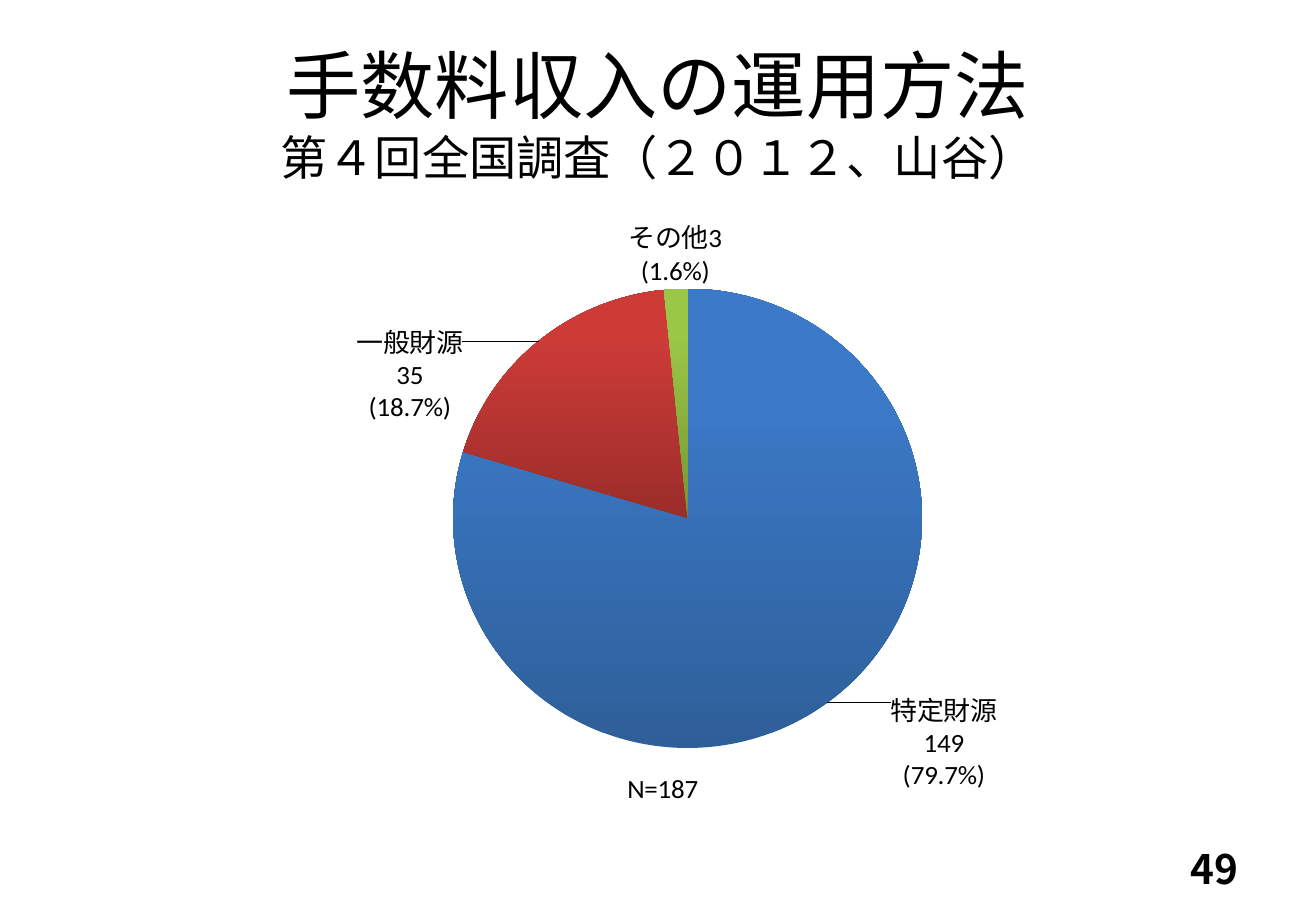
"""Build the slide on how fee income is used, with a pie chart of survey answers."""
from dataclasses import dataclass

from lxml.etree import SubElement
from pptx import Presentation
from pptx.chart.chart import Chart
from pptx.chart.data import CategoryChartData
from pptx.chart.series import PieSeries
from pptx.dml.color import RGBColor
from pptx.enum.chart import XL_CHART_TYPE, XL_LABEL_POSITION
from pptx.enum.text import MSO_ANCHOR, PP_ALIGN
from pptx.oxml import parse_xml
from pptx.oxml.ns import nsdecls, qn
from pptx.slide import Slide
from pptx.text.text import Font
from pptx.util import Pt

COLORS = {
    "text": "000000",
    "blue_dark": "2E5F99",
    "blue": "3C7AC9",
    "red_dark": "9B2D2A",
    "red": "CD3B37",
    "green_dark": "769535",
    "green": "9BC747",
}
LABEL_FORMAT = {"name": "Calibri", "size": Pt(16), "bold": False}


@dataclass(frozen=True)
class Line:
    text: str
    size: float


@dataclass(frozen=True)
class TextBlock:
    left: float
    top: float
    width: float
    height: float
    lines: tuple[Line, ...]
    align: PP_ALIGN
    font: str
    bold: bool = False


@dataclass(frozen=True)
class Slice:
    category: str
    value: int
    label: str
    color: str
    offset: tuple[float, float] | None = None


TEXTS = (
    TextBlock(39, 21.6, 702, 90,
              (Line("手数料収入の運用方法", 44),
               Line("第４回全国調査（２０１２、山谷）", 28)),
              PP_ALIGN.CENTER, "Calibri"),
    TextBlock(558.7, 500.4, 182.2, 28.8, (Line("49", 24),),
              PP_ALIGN.RIGHT, "Noto Sans CJK JP", True),
)
SLICES = (
    Slice("特定財源", 149, "特定財源\n149\n(79.7%)", "blue", (0.05, -0.03)),
    Slice("一般財源", 35, "一般財源\n35\n(18.7%)", "red", (-0.06, 0.15)),
    Slice("その他", 3, "その他3\n(1.6%)", "green"),
)


def rgb(name: str) -> RGBColor:
    """Return the named colour."""
    return RGBColor.from_string(COLORS[name])


def format_font(font: Font, values: dict) -> None:
    """Apply format values and the text colour to a font."""
    for name, value in values.items():
        setattr(font, name, value)
    font.color.rgb = rgb("text")


def add_text(page: Slide, block: TextBlock) -> None:
    """Add a text box with one paragraph per line."""
    box = page.shapes.add_textbox(Pt(block.left), Pt(block.top),
                                  Pt(block.width), Pt(block.height))
    frame = box.text_frame
    frame.word_wrap = True
    frame.vertical_anchor = MSO_ANCHOR.MIDDLE
    for index, line in enumerate(block.lines):
        para = frame.add_paragraph() if index else frame.paragraphs[0]
        para.alignment = block.align
        span = para.add_run()
        span.text = line.text
        format_font(span.font, {"name": block.font, "size": Pt(line.size),
                                "bold": block.bold})


def manual_layout(**values: float | str):
    """Return a chart layout element holding the given settings."""
    layout = parse_xml(f"<c:layout {nsdecls('c')}/>")
    manual = SubElement(layout, qn("c:manualLayout"))
    for name, value in values.items():
        SubElement(manual, qn(f"c:{name}")).set("val", str(value))
    return layout


def style_slice(series: PieSeries, index: int, part: Slice) -> None:
    """Give one slice its gradient and its label."""
    point = series.points[index]
    fill = point.format.fill
    fill.gradient()
    fill.gradient_angle = 90
    stops = ((0, f"{part.color}_dark"), (0.8, part.color))
    for stop, (position, color) in zip(fill.gradient_stops, stops):
        stop.position = position
        stop.color.rgb = rgb(color)
    point.format.line.fill.background()
    label = point.data_label
    label.text_frame.text = part.label
    for para in label.text_frame.paragraphs:
        for span in para.runs:
            format_font(span.font, LABEL_FORMAT)
    label.position = XL_LABEL_POSITION.OUTSIDE_END
    if part.offset:
        x, y = part.offset
        element = series._element.xpath(f"c:dLbls/c:dLbl[c:idx/@val='{index}']")[0]
        element.insert(1, manual_layout(x=x, y=y))


def add_title(chart: Chart) -> None:
    """Put the sample size below the pie."""
    frame = chart.chart_title.text_frame
    frame.text = "N=187"
    format_font(frame.paragraphs[0].runs[0].font, LABEL_FORMAT)
    title = chart.chart_title._element
    for old in title.findall(qn("c:layout")):
        title.remove(old)
    title.find(qn("c:tx")).addnext(
        manual_layout(xMode="edge", yMode="edge", x=0.47, y=0.93))


def add_pie(page: Slide) -> None:
    """Add the pie chart of the answers."""
    data = CategoryChartData()
    data.categories = [part.category for part in SLICES]
    data.add_series("Series 1", [part.value for part in SLICES])
    chart = page.shapes.add_chart(XL_CHART_TYPE.PIE, Pt(39), Pt(126),
                                  Pt(702), Pt(356.4), data).chart
    chart.has_legend = False
    format_font(chart.font, {"name": "Calibri", "size": Pt(18)})
    add_title(chart)
    plot = chart.plots[0]
    plot.vary_by_categories = True
    labels = plot.series[0].data_labels
    labels.show_value = labels.show_percentage = labels.show_category_name = True
    labels.number_format = "0.0%"
    labels.number_format_is_linked = False
    format_font(labels.font, LABEL_FORMAT)
    for index, part in enumerate(SLICES):
        style_slice(plot.series[0], index, part)
    area = chart._chartSpace.chart.plotArea
    for old in area.findall(qn("c:layout")):
        area.remove(old)
    area.insert(0, manual_layout(layoutTarget="inner", xMode="edge", yMode="edge",
                                 x=0.31, y=0.12, w=0.43, h=0.78))


def main() -> None:
    """Build and save the deck."""
    deck = Presentation()
    deck.slide_width, deck.slide_height = Pt(780), Pt(540)
    page = deck.slides.add_slide(deck.slide_layouts[6])
    title, number = TEXTS
    add_text(page, title)
    add_pie(page)
    add_text(page, number)
    deck.save("out.pptx")


if __name__ == "__main__":
    main()
